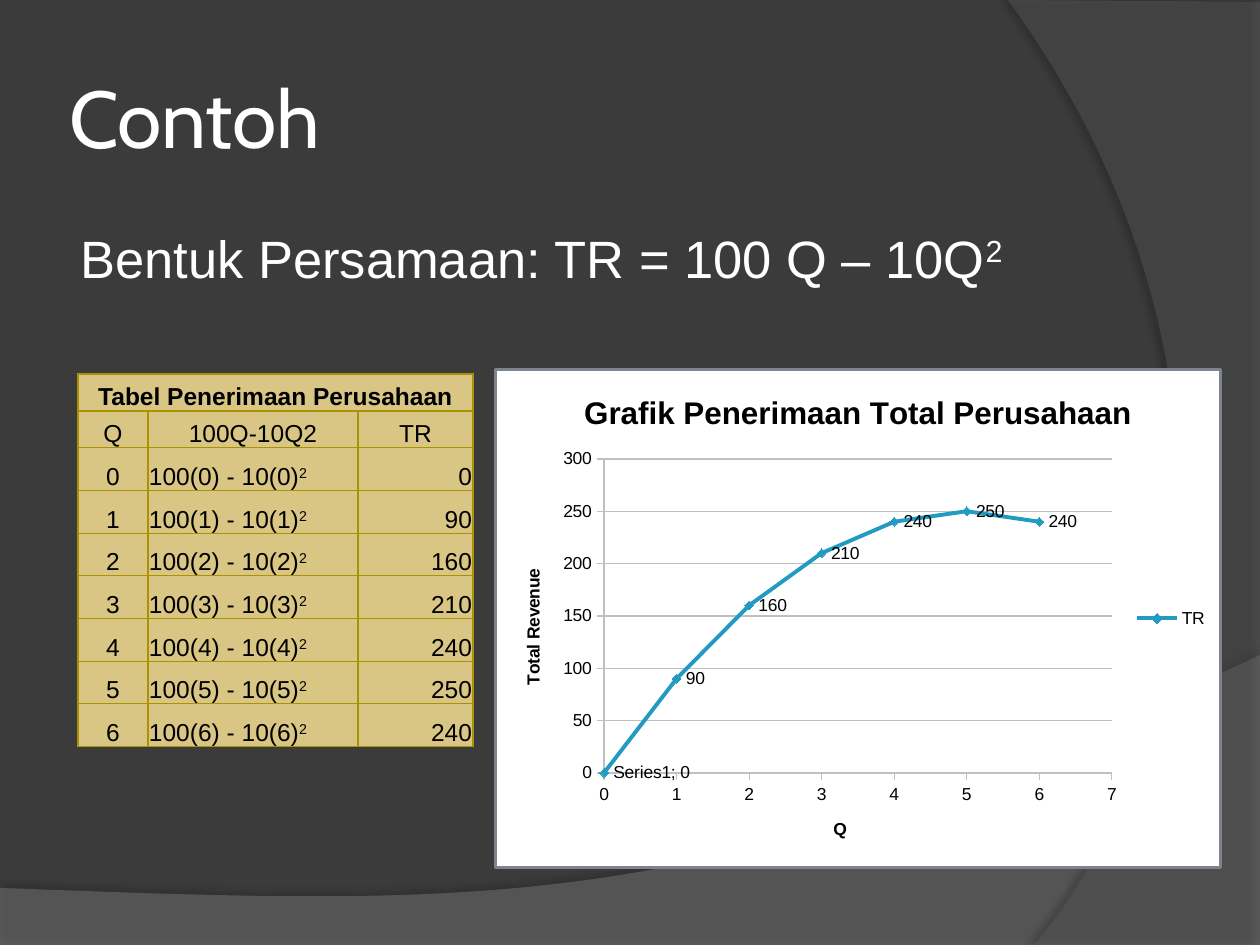
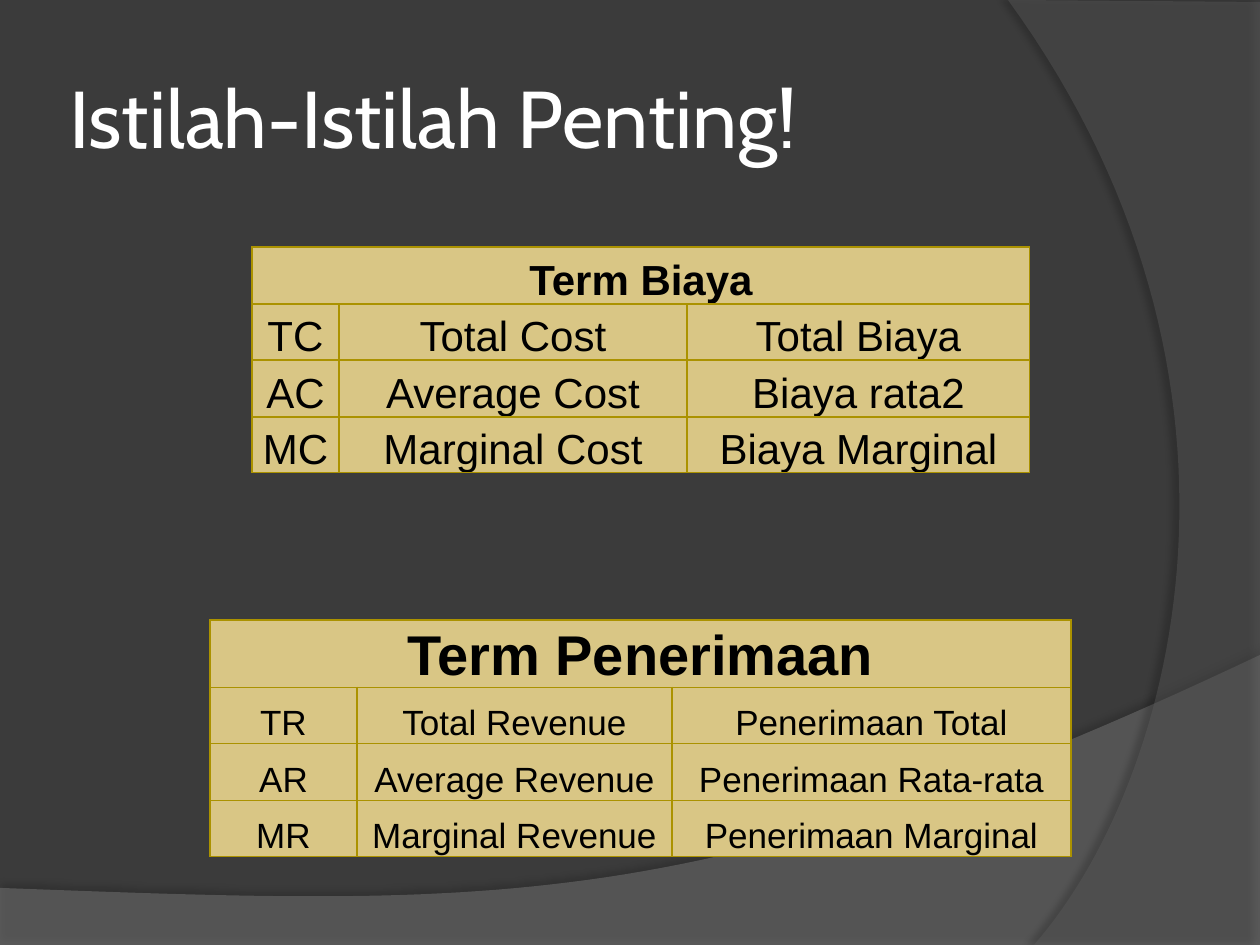
from lxml import etree
from pptx import Presentation
from pptx.chart.data import XyChartData
from pptx.dml.color import RGBColor as RGB
from pptx.enum.chart import XL_CHART_TYPE as Kind, XL_LABEL_POSITION as Spot
from pptx.enum.chart import XL_LEGEND_POSITION as Side, XL_MARKER_STYLE as Mark
from pptx.enum.chart import XL_TICK_MARK as Tick
from pptx.enum.text import MSO_ANCHOR as Anchor, PP_ALIGN as Align
from pptx.oxml import parse_xml
from pptx.util import Pt

PX = 914400 / 126
WHITE = RGB(0xFF, 0xFF, 0xFF)
BLACK = RGB(0, 0, 0)
BACK = RGB(0x3B, 0x3B, 0x3B)
WAVE = RGB(0x7F, 0x7F, 0x7F)
ARC = RGB(0x5E, 0x5E, 0x5E)
SAND = RGB(0xD9, 0xC6, 0x85)
GOLD = RGB(0xAB, 0x92, 0x00)
TEAL = RGB(0x23, 0x9B, 0xC0)
GRID = RGB(0xC0, 0xC0, 0xC0)
FRAME = RGB(0x7E, 0x84, 0x8D)
NS_A = 'xmlns:a="http://schemas.openxmlformats.org/drawingml/2006/main"'
NS_C = 'xmlns:c="http://schemas.openxmlformats.org/drawingml/2006/chart"'


def px(*nums):
    return [round(n * PX) for n in nums]


def say(par, text, size, color=BLACK, face="Arial", bold=False, align=None):
    """Write text; what follows ^ is raised."""
    par.alignment = align
    base, _, power = text.partition("^")
    for part in filter(None, (base, power)) if text else ("",):
        run = par.add_run()
        run.text = part
        look = {"size": Pt(size), "name": face, "bold": bold}
        for key, val in look.items():
            setattr(run.font, key, val)
        run.font.color.rgb = color
    if power:
        run._r.get_or_add_rPr().set("baseline", "30000")


deck = Presentation()
deck.slide_width, deck.slide_height = px(1260, 945)

# Bands: start, curve (two controls and end), closing points, look, shadow
bands = [
    ((0, 945), (1260, 655), [(704, 919), (493, 906), (0, 888)], [],
     WAVE, 45, (35, 3.5, 270)),
    ((1260, 945), (1034, 945), [(1178, 780), (1283, 378), (1008, 0)],
     [(1260, 2)], ARC, 40, (45, 4, 180)),
]

# Tables: left, top, columns, rows, padding, head size, body size, alignments, cells
MID = [Align.CENTER] * 3
sums = [(q, 100 * q - 10 * q * q) for q in range(7)]
sales = (78, 374, [70, 210, 115], [37, 37] + [43, 43, 42] * 2 + [43], 1, 14, 14,
         [Align.CENTER, Align.LEFT, Align.RIGHT],
         [["Tabel Penerimaan Perusahaan", "", ""], ["Q", "100Q-10Q2", "TR"]]
         + [[f"{q}", f"100({q}) - 10({q})^2", f"{tr}"] for q, tr in sums])
costs = (252, 247, [87, 348, 343], [57, 56, 57, 56], 0, 24, 24, MID,
         [["Term Biaya", "", ""],
          ["TC", "Total Cost", "Total Biaya"],
          ["AC", "Average Cost", "Biaya rata2"],
          ["MC", "Marginal Cost", "Biaya Marginal"]])
gains = (210, 620, [147, 315, 399], [63, 56, 57, 56], 0, 32, 20, MID,
         [["Term Penerimaan", "", ""],
          ["TR", "Total Revenue", "Penerimaan Total"],
          ["AR", "Average Revenue", "Penerimaan Rata-rata"],
          ["MR", "Marginal Revenue", "Penerimaan Marginal"]])

pages = [("Contoh", [sales]), ("Istilah-Istilah Penting!", [costs, gains])]
for title, grids in pages:
    slide = deck.slides.add_slide(deck.slide_layouts[6])
    slide.background.fill.solid()
    slide.background.fill.fore_color.rgb = BACK

    # Curved bands behind the content
    for start, turn, curve, rest, color, alpha, (dark, dist, angle) in bands:
        ends = [turn] + curve
        arc = []
        for step in range(61):
            t = step / 60
            mix = ((1 - t) ** 3, 3 * t * (1 - t) ** 2, 3 * t * t * (1 - t), t ** 3)
            arc.append(px(*(sum(m * p[i] for m, p in zip(mix, ends)) for i in (0, 1))))
        corner = [(1260, 945)] if start[0] == 0 else []
        path = slide.shapes.build_freeform(*px(*start), scale=1.0)
        path.add_line_segments([px(*p) for p in corner] + arc + [px(*p) for p in rest])
        band = path.convert_to_shape()
        band.fill.solid()
        band.fill.fore_color.rgb = color
        band.line.fill.background()
        tint = band._element.spPr.find(".//{*}solidFill/{*}srgbClr")
        etree.SubElement(tint, tint.tag.replace("srgbClr", "alpha"), val=f"{alpha * 1000}")
        band._element.spPr.append(parse_xml(
            f'<a:effectLst {NS_A}><a:outerShdw blurRad="{Pt(4)}" dist="{Pt(dist)}" '
            f'dir="{angle * 60000}" algn="ctr" rotWithShape="0"><a:srgbClr val="000000">'
            f'<a:alpha val="{dark * 1000}"/></a:srgbClr></a:outerShdw></a:effectLst>'))

    # Title
    head = slide.shapes.add_textbox(*px(63, 38, 1029, 157)).text_frame
    pad = px(6)[0]
    for key, val in {"word_wrap": True, "vertical_anchor": Anchor.MIDDLE,
                     "margin_left": pad, "margin_right": pad}.items():
        setattr(head, key, val)
    say(head.paragraphs[0], title, 46, WHITE, "Cabin")

    # Tables
    for left, top, cols, rows, pad, big, small, sides, words in grids:
        area = px(left, top, sum(cols), sum(rows))
        table = slide.shapes.add_table(len(rows), len(cols), *area).table
        table.first_row = table.horz_banding = False
        for col, wide in zip(table.columns, px(*cols)):
            col.width = wide
        for row, high in zip(table.rows, px(*rows)):
            row.height = high
        edge = px(pad)[0]
        for r, line in enumerate(words):
            for c, text in enumerate(line):
                cell = table.cell(r, c)
                for key, val in {"margin_left": edge, "margin_right": edge,
                                 "margin_top": edge, "margin_bottom": 0,
                                 "vertical_anchor": Anchor.BOTTOM}.items():
                    setattr(cell, key, val)
                say(cell.text_frame.paragraphs[0], text, small if r else big,
                    bold=r == 0, align=sides[c] if r > 1 else Align.CENTER)
                props = cell._tc.get_or_add_tcPr()
                for side in "LRTB":
                    props.append(parse_xml(
                        f'<a:ln{side} {NS_A} w="{Pt(0.75)}"><a:solidFill>'
                        f'<a:srgbClr val="{GOLD}"/></a:solidFill></a:ln{side}>'))
                cell.fill.solid()
                cell.fill.fore_color.rgb = SAND
        table.cell(0, 0).merge(table.cell(0, 2))

# Equation on the first slide
slide = deck.slides[0]
body = slide.shapes.add_textbox(*px(68, 220, 1024, 80)).text_frame
body.word_wrap = True
par = body.paragraphs[0]
par.space_before = Pt(6)
say(par, "Bentuk Persamaan: TR = 100 Q – 10Q^2", 30, WHITE)

# Revenue chart
data = XyChartData()
line = data.add_series("TR")
for q, tr in sums:
    line.add_data_point(q, tr)
chart = slide.shapes.add_chart(Kind.XY_SCATTER_SMOOTH, *px(494, 368, 728, 501), data).chart
for key, val in {"size": Pt(10), "name": "Arial"}.items():
    setattr(chart.font, key, val)
chart.font.color.rgb = BLACK
chart.has_title = chart.has_legend = True
say(chart.chart_title.text_frame.paragraphs[0],
    "Grafik Penerimaan Total Perusahaan", 18, bold=True)
chart.legend.position = Side.RIGHT
chart.legend.include_in_layout = False
chart.plots[0].vary_by_categories = False

# Axes
for axis, name, top, unit in ((chart.category_axis, "Q", 7, 1),
                              (chart.value_axis, "Total Revenue", 300, 50)):
    for key, val in {"minimum_scale": 0, "maximum_scale": top, "major_unit": unit,
                     "major_tick_mark": Tick.OUTSIDE, "minor_tick_mark": Tick.NONE,
                     "has_major_gridlines": name != "Q"}.items():
        setattr(axis, key, val)
    axis.format.line.color.rgb = GRID
    say(axis.axis_title.text_frame.paragraphs[0], name, 10, bold=True)
chart.value_axis.major_gridlines.format.line.color.rgb = GRID

# Curve, markers and labels
curve = chart.plots[0].series[0]
curve.smooth = True if hasattr(curve, "smooth") else None
curve.format.line.color.rgb = TEAL
curve.format.line.width = Pt(2.25)
curve.marker.style = Mark.DIAMOND
curve.marker.size = 5
curve.marker.format.fill.solid()
curve.marker.format.fill.fore_color.rgb = TEAL
curve.marker.format.line.color.rgb = TEAL
for i in range(len(sums)):
    label = curve.points[i].data_label
    if i == 0:
        say(label.text_frame.paragraphs[0], "Series1; 0", 10)
    label.position = Spot.RIGHT

# Plot place and chart frame
plot = chart._chartSpace.chart.plotArea
for old in plot.findall("{*}layout"):
    plot.remove(old)
place = {"x": 0.15, "y": 0.18, "w": 0.7, "h": 0.63}
plot.insert(0, parse_xml(
    f'<c:layout {NS_C}><c:manualLayout><c:layoutTarget val="inner"/>'
    '<c:xMode val="edge"/><c:yMode val="edge"/>'
    + "".join(f'<c:{key} val="{val}"/>' for key, val in place.items())
    + '</c:manualLayout></c:layout>'))
chart._chartSpace.find("{*}txPr").addprevious(parse_xml(
    f'<c:spPr {NS_C} {NS_A}><a:solidFill><a:srgbClr val="{WHITE}"/></a:solidFill>'
    f'<a:ln w="{Pt(1.5)}"><a:solidFill><a:srgbClr val="{FRAME}"/></a:solidFill></a:ln></c:spPr>'))

deck.save("out.pptx")
